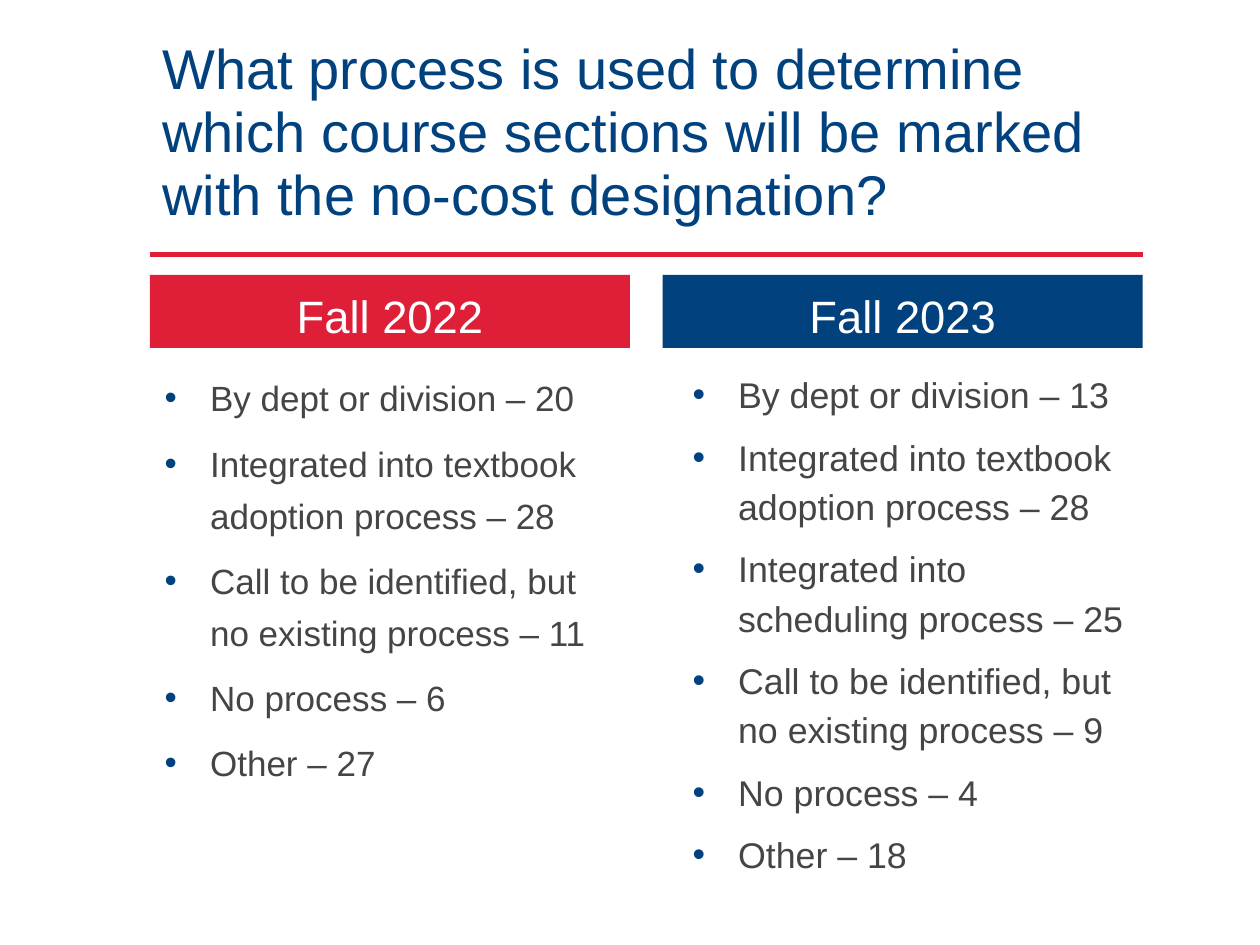
from lxml import etree
from pptx import Presentation
from pptx.dml.color import RGBColor
from pptx.enum import shapes, text
from pptx.oxml import ns
from pptx.util import Pt

COLORS = {"red": "DE1F37", "blue": "00417E", "grey": "454545", "white": "FFFFFF"}
FONT = "Arial"
TITLE = ("What process is used to determine which course sections "
         "will be marked with the no-cost designation?")
COLUMNS = [
    {"heading": "Fall 2022", "fill": "red", "size": 20, "spacing": 1.24,
     "list_left": 77, "items": [
         "By dept or division – 20",
         "Integrated into textbook adoption process – 28",
         "Call to be identified, but no existing process – 11",
         "No process – 6",
         "Other – 27"]},
    {"heading": "Fall 2023", "fill": "blue", "size": 20.4, "spacing": 1.15,
     "list_left": 378.7, "items": [
         "By dept or division – 13",
         "Integrated into textbook adoption process – 28",
         "Integrated into scheduling process – 25",
         "Call to be identified, but no existing process – 9",
         "No process – 4",
         "Other – 18"]},
]

# Layout in points
LEFT, RIGHT = 85.7, 653
COLUMN_WIDTH = 274.3
COLUMN_STEP = RIGHT - LEFT - COLUMN_WIDTH
RULE_TOP, HEADING_TOP, HEADING_HEIGHT = 145.5, 157, 41.8
LIST_TOP, LIST_HEIGHT = 206, 306
INDENT, HANGING = 36, 26


def color(name):
    return RGBColor.from_string(COLORS[name])


def prepare(box, anchor):
    frame = box.text_frame
    frame.word_wrap = True
    frame.vertical_anchor = anchor
    return frame


def write(para, words, size, ink, spacing, before=0):
    para.line_spacing = spacing
    para.space_before = Pt(before)
    span = para.add_run()
    span.text = words
    span.font.name = FONT
    span.font.size = Pt(size)
    span.font.color.rgb = color(ink)


def add_bullet(para, ink):
    props = para._p.get_or_add_pPr()
    props.set("marL", str(Pt(INDENT)))
    props.set("indent", str(-Pt(HANGING)))
    tint = etree.SubElement(props, ns.qn("a:buClr"))
    etree.SubElement(tint, ns.qn("a:srgbClr"), val=COLORS[ink])
    etree.SubElement(props, ns.qn("a:buFont"), typeface=FONT)
    etree.SubElement(props, ns.qn("a:buChar"), char="•")


deck = Presentation()
deck.slide_width, deck.slide_height = Pt(720), Pt(540)
page = deck.slides.add_slide(deck.slide_layouts[6])

# Rule under the title
rule = page.shapes.add_connector(shapes.MSO_CONNECTOR.STRAIGHT,
                                 Pt(LEFT), Pt(RULE_TOP), Pt(RIGHT), Pt(RULE_TOP))
rule.line.color.rgb = color("red")
rule.line.width = Pt(2.5)
etree.SubElement(rule._element.spPr, ns.qn("a:effectLst"))

# Title
title = page.shapes.add_textbox(Pt(LEFT), Pt(63.4), Pt(RIGHT - LEFT), Pt(70.6))
frame = prepare(title, text.MSO_ANCHOR.BOTTOM)
write(frame.paragraphs[0], TITLE, 32, "blue", 0.94)

# One heading bar and bulleted list per term
for index, column in enumerate(COLUMNS):
    left = LEFT + index * COLUMN_STEP
    bar = page.shapes.add_shape(shapes.MSO_SHAPE.RECTANGLE, Pt(left), Pt(HEADING_TOP),
                                Pt(COLUMN_WIDTH), Pt(HEADING_HEIGHT))
    bar.shadow.inherit = False
    bar.fill.solid()
    bar.fill.fore_color.rgb = color(column["fill"])
    bar.line.fill.background()
    para = prepare(bar, text.MSO_ANCHOR.BOTTOM).paragraphs[0]
    para.alignment = text.PP_ALIGN.CENTER
    write(para, column["heading"], 25.9, "white", 0.8, 7.5)

    list_left = column["list_left"]
    box = page.shapes.add_textbox(Pt(list_left), Pt(LIST_TOP),
                                  Pt(left + COLUMN_WIDTH - list_left), Pt(LIST_HEIGHT))
    frame = prepare(box, text.MSO_ANCHOR.TOP)
    for number, item in enumerate(column["items"]):
        para = frame.add_paragraph() if number else frame.paragraphs[0]
        write(para, item, column["size"], "grey", column["spacing"], 7.5)
        add_bullet(para, "blue")

deck.save("out.pptx")
